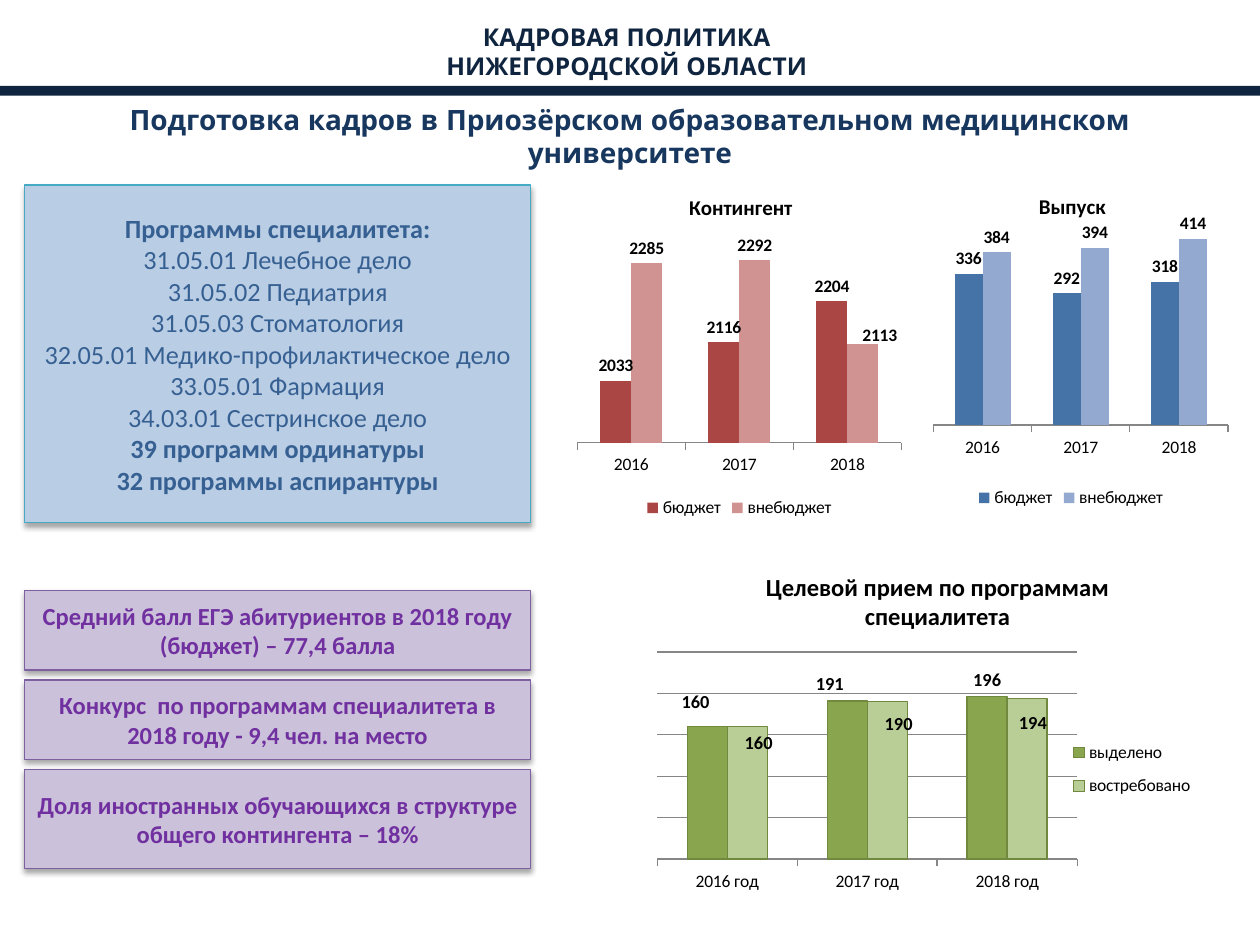
"""Build a slide on medical staff training with programme lists and three column charts."""
from lxml import etree
from pptx import Presentation
from pptx.chart.data import CategoryChartData
from pptx.dml.color import RGBColor
from pptx.enum.chart import XL_CHART_TYPE, XL_LABEL_POSITION, XL_LEGEND_POSITION, XL_TICK_LABEL_POSITION, XL_TICK_MARK
from pptx.enum.shapes import MSO_SHAPE
from pptx.enum.text import MSO_ANCHOR, MSO_AUTO_SIZE, PP_ALIGN
from pptx.oxml import parse_xml
from pptx.oxml.ns import nsdecls, qn
from pptx.util import Cm, Pt

COLUMNS = XL_CHART_TYPE.COLUMN_CLUSTERED
OUTSIDE = XL_LABEL_POSITION.OUTSIDE_END
LEGEND_BOTTOM, LEGEND_RIGHT = XL_LEGEND_POSITION.BOTTOM, XL_LEGEND_POSITION.RIGHT
LABELS_LOW = XL_TICK_LABEL_POSITION.LOW
TICK_OUT, TICK_NONE = XL_TICK_MARK.OUTSIDE, XL_TICK_MARK.NONE
RECTANGLE = MSO_SHAPE.RECTANGLE
MIDDLE, TOP = MSO_ANCHOR.MIDDLE, MSO_ANCHOR.TOP
CENTER = PP_ALIGN.CENTER
NO_FIT = MSO_AUTO_SIZE.NONE
color = RGBColor.from_string


def write_lines(shape, lines, size, font_name, hex_color, anchor=MIDDLE):
    """Fill a shape with centred paragraphs given as (text, bold) pairs."""
    frame = shape.text_frame
    frame.word_wrap = True
    frame.auto_size = NO_FIT
    frame.vertical_anchor = anchor
    for index, (text, bold) in enumerate(lines):
        paragraph = frame.add_paragraph() if index else frame.paragraphs[0]
        paragraph.alignment = CENTER
        paragraph.space_before = Pt(0)
        run = paragraph.add_run()
        run.text = text
        run.font.size = Pt(size)
        run.font.name = font_name
        run.font.bold = bold
        run.font.color.rgb = color(hex_color)


def set_layout(parent, index, values, edge=True):
    """Give a chart part a manual layout of x, y and optionally width and height."""
    for old_layout in parent.findall(qn("c:layout")):
        parent.remove(old_layout)
    layout = parse_xml(f"<c:layout {nsdecls('c')}><c:manualLayout/></c:layout>")
    entries = [("layoutTarget", "inner")] if parent.tag == qn("c:plotArea") else []
    if edge:
        entries += [("xMode", "edge"), ("yMode", "edge")]
    entries += zip("xywh", values)
    for name, value in entries:
        etree.SubElement(layout[0], qn(f"c:{name}")).set("val", str(value))
    parent.insert(index, layout)


presentation = Presentation()
presentation.slide_width, presentation.slide_height = Cm(25.4), Cm(19.05)
slide = presentation.slides.add_slide(presentation.slide_layouts[1])
shapes = slide.shapes

header = shapes.add_textbox(Cm(0.71), Cm(0.33), Cm(23.85), Cm(1.4))
write_lines(header, [("КАДРОВАЯ ПОЛИТИКА", True), ("НИЖЕГОРОДСКОЙ ОБЛАСТИ", True)], 14, "Quicksand", "0F243E")

divider = shapes.add_shape(RECTANGLE, 0, Cm(1.73), Cm(25.4), Cm(0.2))
divider.shadow.inherit = False
divider.fill.solid()
divider.fill.fore_color.rgb = color("0F243E")
divider.line.fill.background()

title = shapes.title
title.left, title.top, title.width, title.height = Cm(0.5), Cm(1.93), Cm(24.4), Cm(1.63)
write_lines(title, [("Подготовка кадров в Приозёрском образовательном медицинском университете", True)],
            16, "Quicksand", "17375E", TOP)

programmes = slide.placeholders[1]
programmes.left, programmes.top, programmes.width, programmes.height = Cm(0.5), Cm(3.73), Cm(10.2), Cm(6.81)
write_lines(programmes, [
    ("Программы специалитета:", True),
    ("31.05.01 Лечебное дело", False),
    ("31.05.02 Педиатрия", False),
    ("31.05.03 Стоматология", False),
    ("32.05.01 Медико-профилактическое дело", False),
    ("33.05.01 Фармация", False),
    ("34.03.01 Сестринское дело", False),
    ("39 программ ординатуры", True),
    ("32 программы аспирантуры", True),
], 15, "Calibri", "376092")
for paragraph in programmes.text_frame.paragraphs:
    properties = paragraph._p.get_or_add_pPr()
    properties.set("marL", "0")
    properties.set("indent", "0")
    etree.SubElement(properties, qn("a:buNone"))

boxes = [(programmes, "B9CDE5", "46AAC5")]
facts = [
    ("Средний балл ЕГЭ абитуриентов в 2018 году (бюджет) – 77,4 балла", 1.6),
    ("Конкурс  по программам специалитета в 2018 году - 9,4 чел. на место", 1.6),
    ("Доля иностранных обучающихся в структуре общего контингента – 18%", 2),
]
for index, (text, height) in enumerate(facts):
    fact = shapes.add_shape(RECTANGLE, Cm(0.5), Cm(11.91 + 1.8 * index), Cm(10.2), Cm(height))
    write_lines(fact, [(text, True)], 14, "Calibri", "7030A0")
    boxes.append((fact, "CCC1DA", "7D60A0"))

for box, fill, line in boxes:
    box.fill.solid()
    box.fill.fore_color.rgb = color(fill)
    box.line.color.rgb = color(line)
    box.line.width = Pt(0.75)
    box._element.spPr.append(parse_xml(
        f'<a:effectLst {nsdecls("a")}><a:outerShdw blurRad="40000" dist="23000" dir="5400000" rotWithShape="0">'
        '<a:srgbClr val="000000"><a:alpha val="35000"/></a:srgbClr></a:outerShdw></a:effectLst>'))

years = ["2016", "2017", "2018"]
charts = [
    {"at": (11.5, 3.53, 6.81, 7.01), "title": "Контингент", "title_at": (0.34, 0.04), "categories": years,
     "series": [("бюджет", (2033, 2116, 2204), "AA4643", {}),
                ("внебюджет", (2285, 2292, 2113), "D19392", {2: (0.05, 0.02)})],
     "scale": (1900, 2400), "plot": (0.02, 0.1, 0.96, 0.67), "label_size": 10},
    {"at": (18.29, 3.53, 6.6, 6.81), "title": "Выпуск", "title_at": (0.39, 0.04), "categories": years,
     "series": [("бюджет", (336, 292, 318), "4572A7", {}),
                ("внебюджет", (384, 394, 414), "93A9CF", {})],
     "scale": (0, 450), "plot": (0.08, 0.14, 0.9, 0.6), "label_size": 10},
    {"at": (12.9, 12.98, 11.6, 5.56), "title": None, "categories": [f"{year} год" for year in years],
     "series": [("выделено", (160, 191, 196), "89A54E", {0: (-0.02, -0.03), 1: (-0.03, 0)}),
                ("востребовано", (160, 190, 194), "B9CD96", {0: (0.02, 0.12), 1: (0.02, 0.14), 2: (0.01, 0.15)})],
     "scale": (0, 250), "plot": (0.03, 0.03, 0.73, 0.75), "label_size": 10.5},
]
for settings in charts:
    chart_data = CategoryChartData()
    chart_data.categories = settings["categories"]
    for name, values, *_ in settings["series"]:
        chart_data.add_series(name, values)
    chart = shapes.add_chart(COLUMNS, *map(Cm, settings["at"]), chart_data).chart
    chart.font.size = Pt(10)
    chart.font.name = "Calibri"
    chart.font.color.rgb = color("000000")
    has_title = settings["title"] is not None
    chart.has_title = has_title
    if has_title:
        run = chart.chart_title.text_frame.paragraphs[0].add_run()
        run.text = settings["title"]
        run.font.size = Pt(12)
        run.font.bold = True
        set_layout(chart.element.find(".//" + qn("c:title")), 1, settings["title_at"])
    set_layout(chart.element.find(".//" + qn("c:plotArea")), 0, settings["plot"])

    chart.has_legend = True
    chart.legend.include_in_layout = False
    chart.legend.position = LEGEND_BOTTOM if has_title else LEGEND_RIGHT
    if not has_title:
        set_layout(chart.element.find(".//" + qn("c:legend")), 1, (0.74, 0.31, 0.23, 0.29))

    value_axis, category_axis = chart.value_axis, chart.category_axis
    value_axis.minimum_scale, value_axis.maximum_scale = settings["scale"]
    value_axis.major_unit = 50
    value_axis.visible = False
    value_axis.has_major_gridlines = not has_title
    if not has_title:
        value_axis.major_gridlines.format.line.color.rgb = color("868686")
        value_axis.major_gridlines.format.line.width = Pt(0.75)
    category_axis.major_tick_mark = TICK_OUT
    category_axis.minor_tick_mark = TICK_NONE
    category_axis.tick_label_position = LABELS_LOW
    category_axis.format.line.color.rgb = color("868686")
    category_axis.format.line.width = Pt(0.75)

    plot = chart.plots[0]
    plot.gap_width = 150
    plot.overlap = 0
    plot.vary_by_categories = False
    for series, (_, _, fill, offsets) in zip(plot.series, settings["series"]):
        series.format.fill.solid()
        series.format.fill.fore_color.rgb = color(fill)
        if not has_title:
            series.format.line.color.rgb = color("71893F")
            series.format.line.width = Pt(0.75)
        labels = series.data_labels
        labels.show_value = True
        moved_labels = [series.points[index].data_label for index in offsets]
        for label in [labels, *moved_labels]:
            label.position = OUTSIDE
            label.font.size = Pt(settings["label_size"])
            label.font.bold = True
        for element, offset in zip(series._element.iter(qn("c:dLbl")), offsets.values()):
            set_layout(element, 1, offset, edge=False)
        for leader_lines in series._element.iter(qn("c:showLeaderLines")):
            leader_lines.set("val", "0")

heading = shapes.add_shape(RECTANGLE, Cm(13.9), Cm(11.53), Cm(10), Cm(1.19))
heading.shadow.inherit = False
heading.fill.solid()
heading.fill.fore_color.rgb = color("FFFFFF")
heading.line.fill.background()
write_lines(heading, [("Целевой прием по программам специалитета", True)], 14, "Calibri", "000000")

presentation.save("out.pptx")
